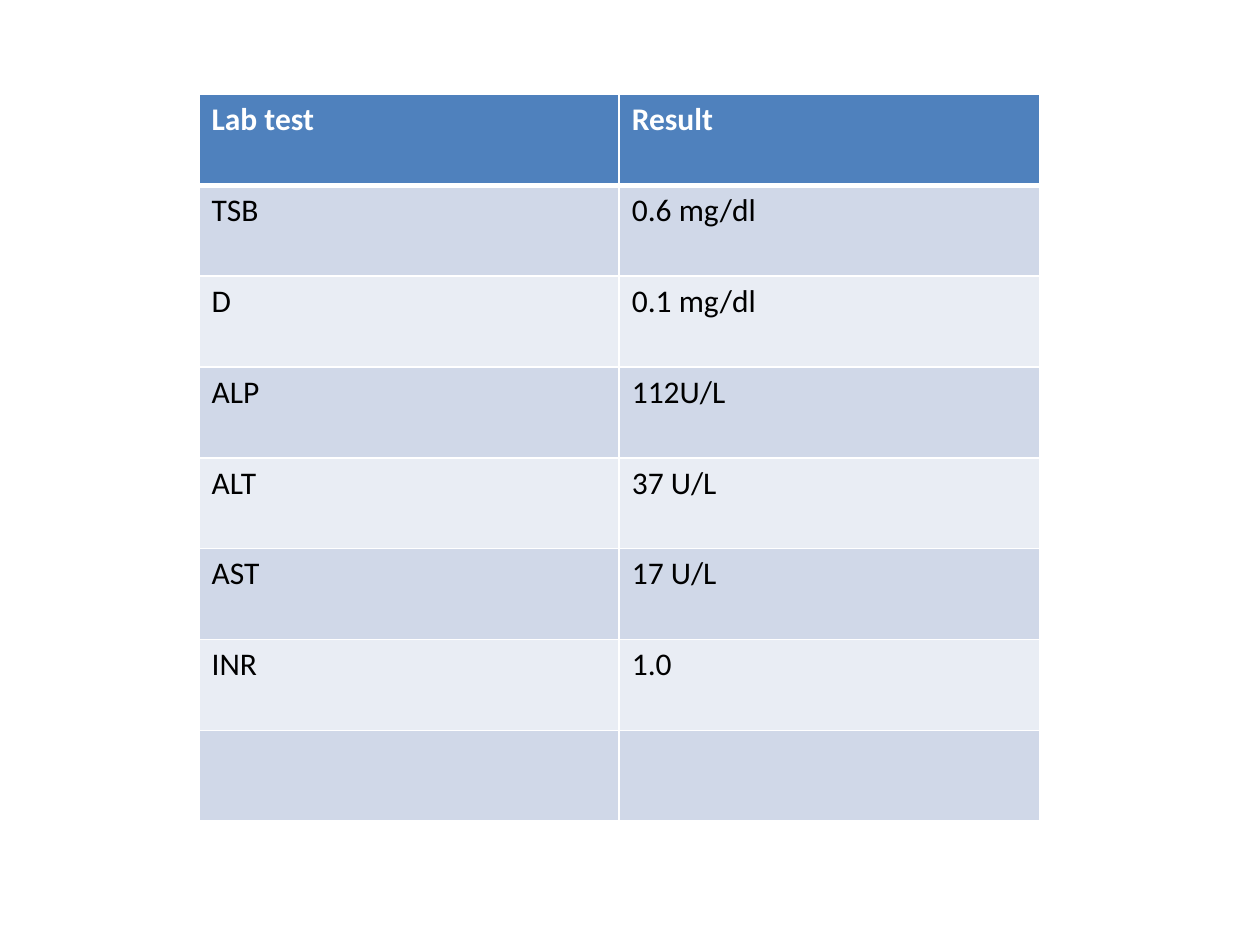
from dataclasses import dataclass

from lxml.etree import SubElement
from pptx import Presentation
from pptx.dml.color import RGBColor
from pptx.oxml.ns import qn
from pptx.util import Inches, Pt


@dataclass(frozen=True)
class Theme:
    font: str = "Calibri"
    size: int = 18
    header: str = "4F81BD"
    bands: tuple = ("D0D8E8", "E9EDF4")
    text: str = "000000"
    white: str = "FFFFFF"
    thin: float = 1
    thick: float = 3


theme = Theme()


def add_border(cell, side, width):
    line = SubElement(cell._tc.get_or_add_tcPr(), qn(f"a:ln{side}"), w=str(Pt(width)))
    fill = SubElement(line, qn("a:solidFill"))
    SubElement(fill, qn("a:srgbClr"), val=theme.white)


# Slide
prs = Presentation()
prs.slide_width, prs.slide_height = Inches(10), Inches(7.5)
s = prs.slides.add_slide(prs.slide_layouts[6])

# Lab results, with an empty last row
results = [
    ("Lab test", "Result"),
    ("TSB", "0.6 mg/dl"),
    ("D", "0.1 mg/dl"),
    ("ALP", "112U/L"),
    ("ALT", "37 U/L"),
    ("AST", "17 U/L"),
    ("INR", "1.0"),
    ("", ""),
]
table = s.shapes.add_table(
    len(results), 2, Inches(1.58), Inches(0.75), Inches(6.67), Inches(5.77)
).table

# Cells: header row, then alternating bands
for row, values in enumerate(results):
    is_header = row == 0
    color = theme.header if is_header else theme.bands[(row - 1) % 2]
    widths = {
        "L": theme.thin,
        "R": theme.thin,
        "T": theme.thick if row == 1 else theme.thin,
        "B": theme.thick if is_header else theme.thin,
    }
    font_format = {"name": theme.font, "size": Pt(theme.size), "bold": is_header}
    for col, value in enumerate(values):
        cell = table.cell(row, col)
        for side, width in widths.items():
            add_border(cell, side, width)
        cell.fill.solid()
        cell.fill.fore_color.rgb = RGBColor.from_string(color)
        if not value:
            continue
        r = cell.text_frame.paragraphs[0].add_run()
        r.text = value
        for name, setting in font_format.items():
            setattr(r.font, name, setting)
        r.font.color.rgb = RGBColor.from_string(theme.white if is_header else theme.text)

prs.save("out.pptx")
